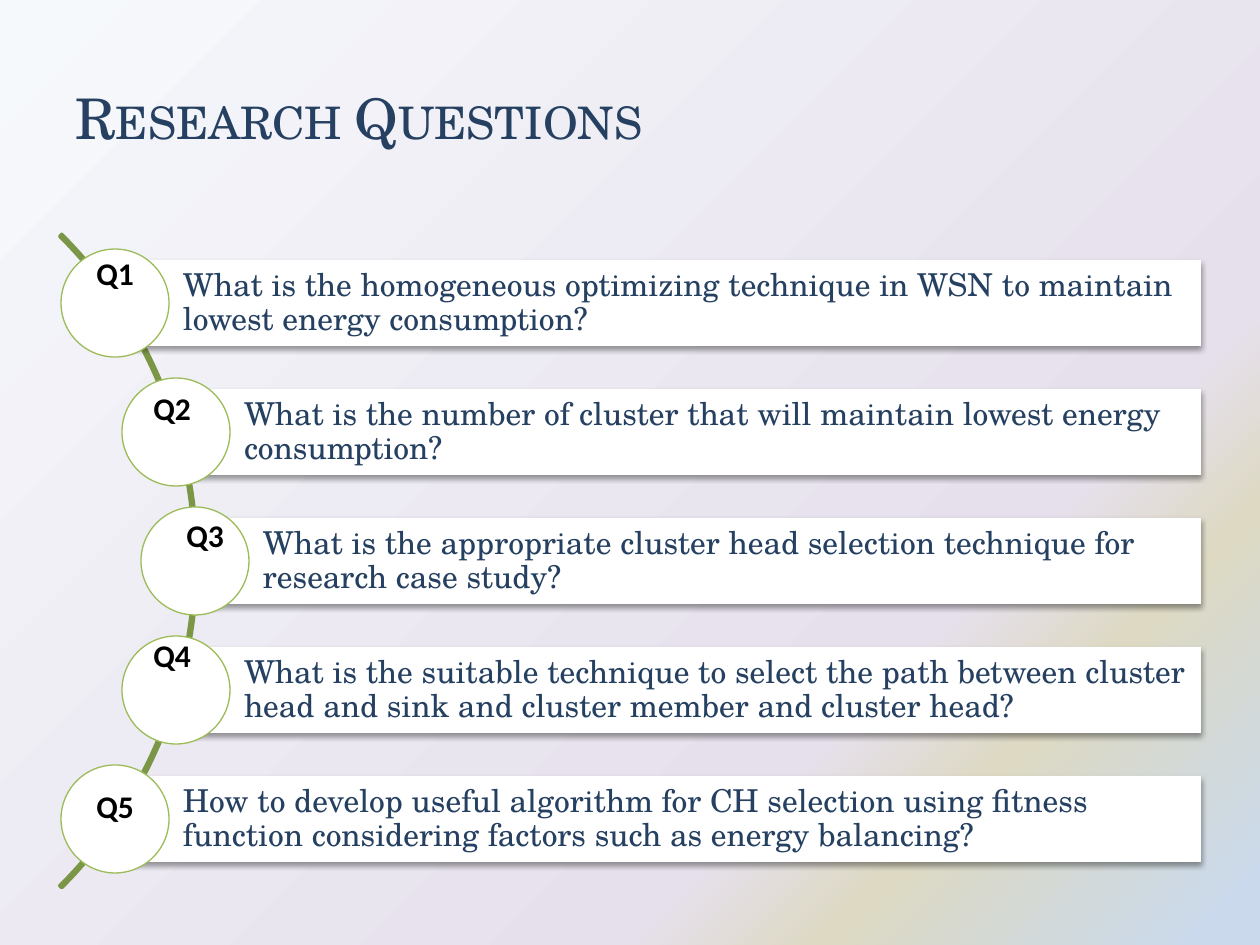
from lxml import etree
from pptx import Presentation
from pptx import util as u
from pptx.dml.color import RGBColor
from pptx.enum import shapes, text
from pptx.oxml import ns

PX = u.Inches(1) / 126
SERIF = "TeX Gyre Schola"
SANS = "Calibri"
COLORS = {
    "ink": "254061",
    "label": "000000",
    "bar": "FFFFFF",
    "ring": "9BBB59",
    "arc": "7C9647",
    "shadow": "000000",
}
BACKGROUND = [(0, "F6F9FC"), (71, "E6E0EC"), (80, "DDD9C3"), (97, "CAD9EB")]
ROW_PITCH, BAR_HEIGHT, CIRCLE = 129, 86, 108
QUESTIONS = [
    ("What is the homogeneous optimizing technique in WSN to maintain lowest energy consumption?",
     55, (24, -12, 89)),
    ("What is the number of cluster that will maintain lowest energy consumption?",
     116, (81, -6, 89)),
    ("What is the appropriate cluster head selection technique for research case study?",
     135, (114, -8, 169)),
    ("What is the suitable technique to select the path between cluster head and sink "
     "and cluster member and cluster head?",
     116, (81, -17, 117)),
    ("How to develop useful algorithm for CH selection using fitness function "
     "considering factors such as energy balancing?",
     55, (24, 5, 69)),
]


def px(value):
    return u.Emu(round(value * PX))


def rgb(name):
    return RGBColor.from_string(COLORS[name])


def add_child(parent, tag, **attributes):
    child = etree.SubElement(parent, ns.qn(tag))
    for name, value in attributes.items():
        child.set(name, str(value))
    return child


def paint_background(slide):
    fill = slide.background.fill
    fill.gradient()
    fill.gradient_angle = 315
    stops = slide.element.xpath(".//a:gsLst")[0]
    for stop in list(stops):
        stops.remove(stop)
    for position, color in BACKGROUND:
        stop = add_child(stops, "a:gs", pos=position * 1000)
        add_child(stop, "a:srgbClr", val=color)


def write(shape, words, font, size, color, anchor):
    frame = shape.text_frame
    frame.word_wrap = True
    frame.vertical_anchor = anchor
    frame.text = words
    paragraph = frame.paragraphs[0]
    paragraph.alignment = text.PP_ALIGN.LEFT
    run = paragraph.runs[0]
    run.font.name = font
    run.font.size = u.Pt(size)
    run.font.color.rgb = rgb(color)
    return paragraph


def add_box(slide, left, top, width, height):
    return slide.shapes.add_textbox(px(left), px(top), px(width), px(height))


def add_preset(slide, preset, left, top, width, height, fill=None, line=None, weight=1):
    shape = slide.shapes.add_shape(preset, px(left), px(top), px(width), px(height))
    shape.shadow.inherit = False
    if fill:
        shape.fill.solid()
        shape.fill.fore_color.rgb = rgb(fill)
    else:
        shape.fill.background()
    if line:
        shape.line.color.rgb = rgb(line)
        shape.line.width = u.Pt(weight)
    else:
        shape.line.fill.background()
    return shape


def add_shadow(shape):
    effects = shape.element.spPr.find(ns.qn("a:effectLst"))
    shadow = add_child(effects, "a:outerShdw", blurRad=u.Pt(3.1), dist=u.Pt(1.6),
                       dir=5400000, rotWithShape=0)
    color = add_child(shadow, "a:srgbClr", val=COLORS["shadow"])
    add_child(color, "a:alpha", val=38000)


def add_title(slide, left, top, width, height):
    box = add_box(slide, left, top, width, height)
    paragraph = write(box, "Research Questions", SERIF, 32, "ink", text.MSO_ANCHOR.MIDDLE)
    paragraph.runs[0].font._element.set("cap", "small")


def add_arc(slide, center_x, center_y, radius):
    arc = add_preset(slide, shapes.MSO_SHAPE.BLOCK_ARC, center_x - radius, center_y - radius,
                     2 * radius, 2 * radius, line="arc", weight=2)
    for index, value in enumerate((189, 27, 0.003)):
        arc.adjustments[index] = value


def add_question(slide, left, top, width, question, indent):
    bar = add_preset(slide, shapes.MSO_SHAPE.RECTANGLE, left + indent, top,
                     width - indent, BAR_HEIGHT, fill="bar")
    add_shadow(bar)
    paragraph = write(bar, question, SERIF, 18, "ink", text.MSO_ANCHOR.MIDDLE)
    paragraph.line_spacing = 0.9
    frame = bar.text_frame
    frame.margin_left = px(68)
    frame.margin_right = frame.margin_top = frame.margin_bottom = px(6)
    add_preset(slide, shapes.MSO_SHAPE.OVAL, left + indent - CIRCLE / 2,
               top + (BAR_HEIGHT - CIRCLE) / 2, CIRCLE, CIRCLE,
               fill="bar", line="ring", weight=0.75)


def add_label(slide, left, top, width, words):
    box = add_box(slide, left, top, width, 50)
    paragraph = write(box, words, SANS, 18, "label", text.MSO_ANCHOR.TOP)
    paragraph.runs[0].font.bold = True


def add_question_list(slide, left, top, width):
    add_arc(slide, left - 325, top + 2 * ROW_PITCH + BAR_HEIGHT / 2, 462)
    for row, (question, indent, label) in enumerate(QUESTIONS):
        row_top = top + row * ROW_PITCH
        add_question(slide, left, row_top, width, question, indent)
        label_left, label_top, label_width = label
        add_label(slide, left + label_left, row_top + label_top, label_width, f"Q{row + 1}")


def main():
    presentation = Presentation()
    presentation.slide_width = px(1260)
    presentation.slide_height = px(945)
    slide = presentation.slides.add_slide(presentation.slide_layouts[6])
    paint_background(slide)
    add_title(slide, 63, 38, 1134, 158)
    add_question_list(slide, 60, 260, 1141)
    presentation.save("out.pptx")


if __name__ == "__main__":
    main()
